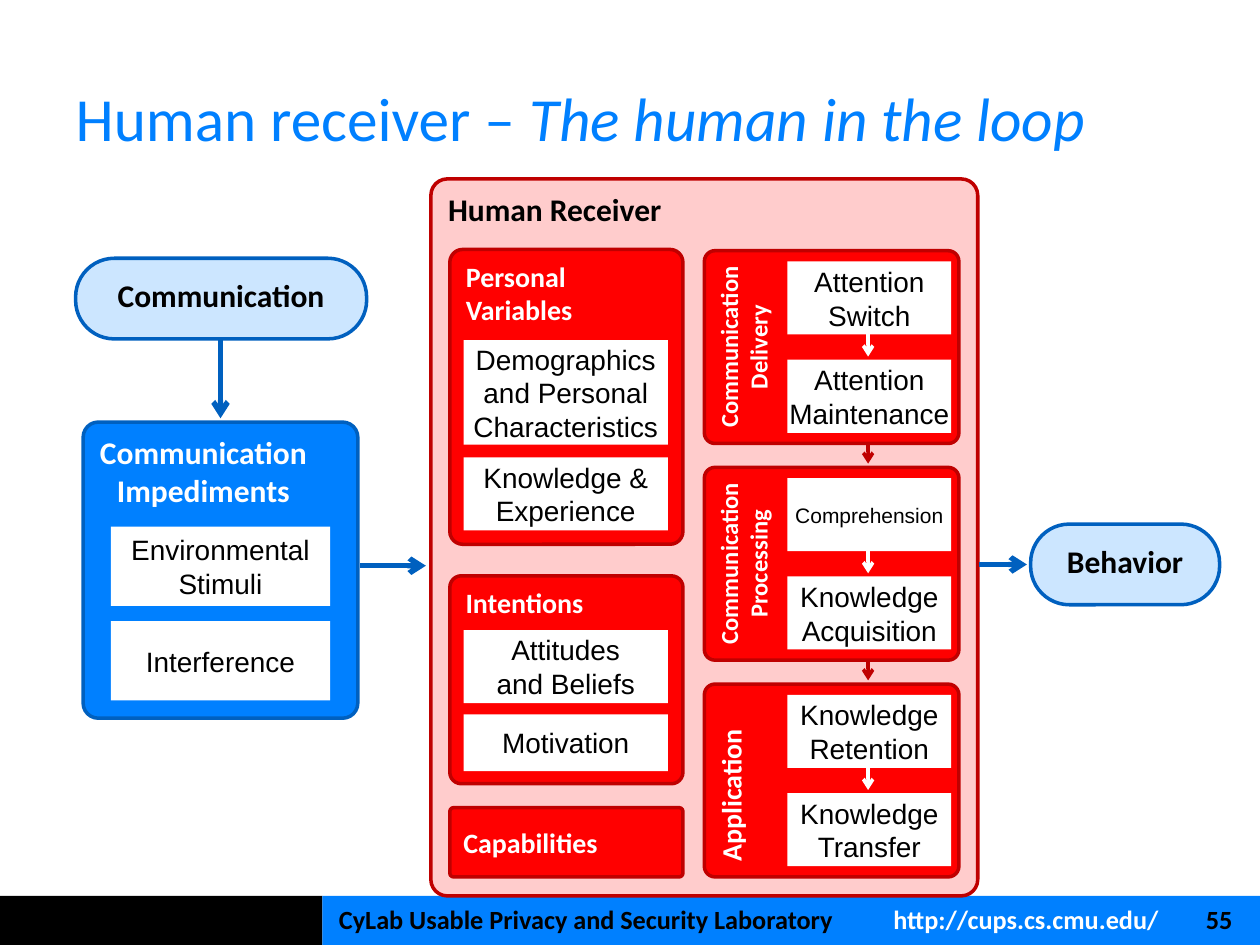
from pptx import Presentation
from pptx.dml.color import RGBColor
from pptx.enum.shapes import MSO_CONNECTOR, MSO_SHAPE
from pptx.enum.text import MSO_ANCHOR, MSO_AUTO_SIZE, PP_ALIGN
from pptx.oxml.ns import qn
from pptx.util import Inches, Pt
from lxml import etree

RECT, ROUNDED = MSO_SHAPE.RECTANGLE, MSO_SHAPE.ROUNDED_RECTANGLE
STRAIGHT = MSO_CONNECTOR.STRAIGHT
LEFT, CENTER = PP_ALIGN.LEFT, PP_ALIGN.CENTER
TOP, MIDDLE = MSO_ANCHOR.TOP, MSO_ANCHOR.MIDDLE
NO_AUTOFIT = MSO_AUTO_SIZE.NONE

BLACK = RGBColor(0x00, 0x00, 0x00)
WHITE = RGBColor(0xFF, 0xFF, 0xFF)
BLUE = RGBColor(0x00, 0x80, 0xFF)
DARK_BLUE = RGBColor(0x00, 0x60, 0xBF)
PALE_BLUE = RGBColor(0xCC, 0xE6, 0xFF)
RED = RGBColor(0xFF, 0x00, 0x00)
DARK_RED = RGBColor(0xBF, 0x00, 0x00)
PINK = RGBColor(0xFF, 0xCC, 0xCC)

COLUMNS, ROWS = 100, 75
HEADING_FONT, BOX_FONT = "Calibri", "Arial"


class Diagram:
    """Places styled elements on a slide divided into 100 columns and 75 rows."""

    def __init__(self, deck):
        self.column = deck.slide_width / COLUMNS
        self.row = deck.slide_height / ROWS
        self.slide = deck.slides.add_slide(deck.slide_layouts[5])

    def area(self, x, y, w, h):
        return (round(x * self.column), round(y * self.row),
                round(w * self.column), round(h * self.row))

    def style(self, run, font, size, color, bold=False, italic=False):
        run.font.name, run.font.size = font, Pt(size)
        run.font.color.rgb = color
        run.font.bold, run.font.italic = bold, italic

    def title(self, area, plain, emphasis):
        title = self.slide.shapes.title
        title.left, title.top, title.width, title.height = self.area(*area)
        frame = title.text_frame
        frame.auto_size, frame.vertical_anchor = NO_AUTOFIT, MIDDLE
        paragraph = frame.paragraphs[0]
        paragraph.alignment = LEFT
        for words, italic in ((plain, False), (emphasis, True)):
            run = paragraph.add_run()
            run.text = words
            self.style(run, HEADING_FONT, 35, BLUE, italic=italic)

    def shape(self, kind, area, fill, outline=None, corner=None):
        shape = self.slide.shapes.add_shape(kind, *self.area(*area))
        shape.shadow.inherit = False
        shape.fill.solid()
        shape.fill.fore_color.rgb = fill
        if outline is None:
            shape.line.fill.background()
        else:
            shape.line.color.rgb, shape.line.width = outline, Pt(2)
        if corner is not None:
            shape.adjustments[0] = corner
        return shape

    def label(self, shape, text, size, color, font=HEADING_FONT, align=CENTER,
              anchor=MIDDLE, side=0.0, edge=0.0, wrap=False):
        frame = shape.text_frame
        frame.text = text
        frame.word_wrap, frame.vertical_anchor = wrap, anchor
        frame.margin_left = frame.margin_right = Inches(side)
        frame.margin_top = frame.margin_bottom = Inches(edge)
        paragraph = frame.paragraphs[0]
        paragraph.alignment = align
        for run in paragraph.runs:
            self.style(run, font, size, color, bold=font == HEADING_FONT)
        return frame

    def box(self, area, text, size=16):
        self.label(self.shape(RECT, area, WHITE), text, size, BLACK, BOX_FONT)

    def pill(self, area, text):
        pill = self.shape(ROUNDED, area, PALE_BLUE, DARK_BLUE, 0.48)
        self.label(pill, text, 18, BLACK).margin_bottom = Inches(0.06)

    def panel(self, area, heading, size=16, fill=RED, outline=DARK_RED,
              color=WHITE, corner=0.055, align=LEFT, anchor=TOP):
        panel = self.shape(ROUNDED, area, fill, outline, corner)
        return self.label(panel, heading, size, color, align=align,
                          anchor=anchor, side=0.1, edge=0.05, wrap=True)

    def stage(self, area, heading, size, align):
        panel = self.shape(ROUNDED, area, RED, DARK_RED, 0.055)
        frame = self.label(panel, heading, size, WHITE, align=align,
                           anchor=TOP, side=0.05, edge=0.05, wrap=True)
        frame._txBody.bodyPr.set("vert", "vert270")

    def arrow(self, start, end, color, width=2):
        x1, y1, x2, y2 = self.area(*start, *end)
        arrow = self.slide.shapes.add_connector(STRAIGHT, x1, y1, x2, y2)
        arrow.line.color.rgb, arrow.line.width = color, Pt(width)
        properties = arrow._element.spPr
        etree.SubElement(properties.find(qn("a:ln")), qn("a:tailEnd"), type="arrow")
        etree.SubElement(properties, qn("a:effectLst"))

    def footer(self, area, parts, stops):
        footer = self.slide.shapes.add_textbox(*self.area(*area))
        frame = footer.text_frame
        frame.word_wrap, frame.margin_left = True, Inches(0.49)
        paragraph = frame.paragraphs[0]
        tabs = etree.SubElement(paragraph._p.get_or_add_pPr(), qn("a:tabLst"))
        for stop in stops:
            etree.SubElement(tabs, qn("a:tab"), pos=str(Inches(stop)), algn="l")
        for index, (words, color) in enumerate(parts):
            run = paragraph.add_run()
            run.text = "\t" + words if index else words
            self.style(run, HEADING_FONT, 15, color, bold=True)


def main():
    deck = Presentation()
    deck.slide_width, deck.slide_height = Inches(10), Inches(7.5)
    diagram = Diagram(deck)

    # Footer band and title
    diagram.shape(RECT, (0, 71.1, 25.6, 3.9), BLACK)
    diagram.shape(RECT, (25.6, 71.1, 74.4, 3.9), BLUE)
    diagram.footer((22, 71.2, 76.8, 3.5), (
        ("CyLab Usable Privacy and Security Laboratory", BLACK),
        ("http://cups.cs.cmu.edu/", WHITE),
        ("55", BLACK)), (4.4, 6.88))
    diagram.title((5, 3, 90, 12.5), "Human receiver – ", "The human in the loop")

    # Communication and its impediments
    diagram.pill((6, 20.5, 23.1, 6.4), "Communication")
    impediments = diagram.panel(
        (6.6, 33.5, 21.8, 23.5), "Communication\vImpediments", 18,
        BLUE, DARK_BLUE, align=CENTER)
    impediments.margin_left, impediments.margin_right = Inches(0.05), Inches(0.32)
    for y, text in ((41.8, "Environmental\vStimuli"), (49.3, "Interference")):
        diagram.box((8.8, y, 17.4, 6.3), text)

    # Human receiver with personal variables, intentions and capabilities
    diagram.panel((34.2, 14.2, 43.4, 56.9), "Human Receiver", 18, PINK,
                  color=BLACK, corner=0.03)
    traits = (
        (19.8, 23.4, "Personal\vVariables", TOP, (
            (27, 8.3, "Demographics\vand Personal\vCharacteristics"),
            (36.3, 5.8, "Knowledge &\vExperience"))),
        (45.7, 16.5, "Intentions", TOP, (
            (50, 5.8, "Attitudes\vand Beliefs"),
            (56.7, 4.5, "Motivation"))),
        (64.1, 5.5, "Capabilities", MIDDLE, ()),
    )
    for y, height, heading, anchor, factors in traits:
        diagram.panel((35.7, y, 18.5, height), heading, anchor=anchor)
        for factor_y, factor_height, text in factors:
            diagram.box((36.8, factor_y, 16.2, factor_height), text)

    # Processing stages, each with two steps
    stages = (
        ("Communication\vDelivery", 14, CENTER,
         (("Attention\vSwitch", 16), ("Attention\vMaintenance", 16))),
        ("Communication\vProcessing", 14, CENTER,
         (("Comprehension", 12), ("Knowledge\vAcquisition", 16))),
        ("Application", 16, LEFT,
         (("Knowledge\vRetention", 16), ("Knowledge\vTransfer", 16))),
    )
    for index, (heading, size, align, steps) in enumerate(stages):
        y = 19.9 + 17.2 * index
        diagram.stage((55.9, y, 20.2, 15.3), heading, size, align)
        for step, (text, step_size) in enumerate(steps):
            diagram.box((62.5, y + 0.85 + 7.8 * step, 13, 5.8), text, step_size)
        diagram.arrow((68.9, y + 6.65), (68.9, y + 8.4), WHITE)
        if index < len(stages) - 1:
            diagram.arrow((68.9, y + 15.3), (68.9, y + 16.9), DARK_RED)

    # Resulting behavior and the main flow
    diagram.pill((81.8, 41.6, 15, 6.4), "Behavior")
    for start, end in (((17.5, 27), (17.5, 33.2)),
                       ((28.6, 44.9), (33.8, 44.9)),
                       ((77.7, 44.8), (81.5, 44.8))):
        diagram.arrow(start, end, DARK_BLUE, 3)

    deck.save("out.pptx")


if __name__ == "__main__":
    main()
